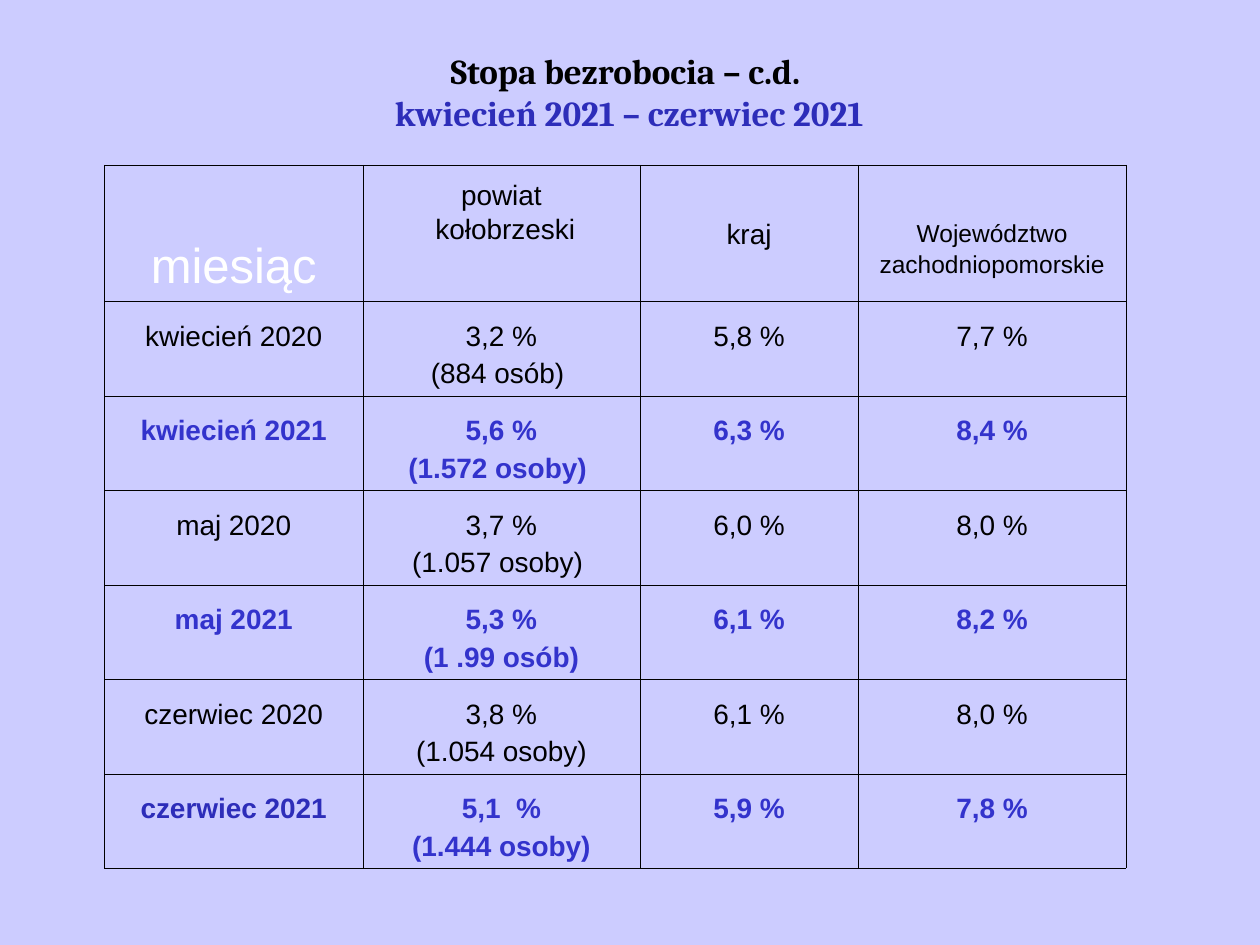
import pptx
import pptx.dml.color
import pptx.enum.text
import pptx.oxml.ns
import pptx.util
from lxml import etree

Inches = pptx.util.Inches
Pt = pptx.util.Pt

COLORS = {
    "background": "CCCCFF",
    "text": "000000",
    "period": "2D2DB9",
    "current": "3333CC",
    "month": "FFFFFF",
    "border": "000000",
}

COLUMN_WIDTHS = [2.05, 2.2, 1.73, 2.13]
HEADER_HEIGHT, ROW_HEIGHT = 1.08, 0.75

# text, size, colour, top margin, line spacing
HEADERS = [
    ("miesiąc", 28, "month", 0.59, 1),
    ("powiat\n kołobrzeski", 16, "text", 0.16, 0.81),
    ("kraj", 16, "text", 0.47, 0.81),
    ("Województwo\nzachodniopomorskie", 14, "text", 0.47, 0.81),
]
RATES = [
    ("kwiecień 2020", "3,2 %\n(884 osób) ", "5,8 %", "7,7 %"),
    ("kwiecień 2021", "5,6 %\n(1.572 osoby) ", "6,3 %", "8,4 %"),
    ("maj 2020", "3,7 %\n(1.057 osoby) ", "6,0 %", "8,0 %"),
    ("maj 2021", "5,3 %\n(1 .99 osób)", "6,1 %", "8,2 %"),
    ("czerwiec 2020", "3,8 %\n(1.054 osoby)", "6,1 %", "8,0 %"),
    ("czerwiec 2021", "5,1  %\n(1.444 osoby)", "5,9 %", "7,8 %"),
]


def rgb(name):
    return pptx.dml.color.RGBColor.from_string(COLORS[name])


class SlideBuilder:
    title_font = "Cambria"
    body_font = "Arial"
    border_width = 0.11

    def __init__(self, prs):
        self.s = prs.slides.add_slide(prs.slide_layouts[5])
        fill = self.s.background.fill
        fill.solid()
        fill.fore_color.rgb = rgb("background")

    def title(self, lines, left, top, width, height):
        sp = self.s.shapes.title
        sp.left, sp.top = Inches(left), Inches(top)
        sp.width, sp.height = Inches(width), Inches(height)
        tf = sp.text_frame
        tf.auto_size = pptx.enum.text.MSO_AUTO_SIZE.NONE
        tf.vertical_anchor = pptx.enum.text.MSO_ANCHOR.MIDDLE
        p = tf.paragraphs[0]
        p.alignment = pptx.enum.text.PP_ALIGN.CENTER
        p.font.name, p.font.size, p.font.bold = self.title_font, Pt(20), True
        for i, (text, color) in enumerate(lines):
            if i:
                p.add_line_break()
            r = p.add_run()
            r.text = text
            r.font.color.rgb = rgb(color)
            r.font.name, r.font.size, r.font.bold = self.title_font, Pt(20), True

    def table(self, left, top, widths, heights):
        frame = self.s.shapes.add_table(
            len(heights), len(widths), Inches(left), Inches(top),
            Inches(sum(widths)), Inches(sum(heights)))
        table = frame.table
        table.first_row = table.horz_banding = False
        for column, width in zip(table.columns, widths):
            column.width = Inches(width)
        for row, height in zip(table.rows, heights):
            row.height = Inches(height)
        return table

    def cell(self, cell, text, size, color, margin_top, line_spacing,
             space_before, bold=False):
        cell.margin_top = Inches(margin_top)
        self.borders(cell)
        cell.fill.background()
        tf = cell.text_frame
        tf.text = text
        for i, p in enumerate(tf.paragraphs):
            p.alignment = pptx.enum.text.PP_ALIGN.CENTER
            p.line_spacing = line_spacing
            if i:
                p.space_before = Pt(space_before)
            p.font.name, p.font.size = self.body_font, Pt(size)
            p.font.bold = bold
            p.font.color.rgb = rgb(color)

    def borders(self, cell):
        qn = pptx.oxml.ns.qn
        props = cell._tc.get_or_add_tcPr()
        for side in ("lnL", "lnR", "lnT", "lnB"):
            line = etree.SubElement(props, qn(f"a:{side}"),
                                    w=str(Pt(self.border_width)))
            fill = etree.SubElement(line, qn("a:solidFill"))
            etree.SubElement(fill, qn("a:srgbClr"), val=COLORS["border"])


def main():
    prs = pptx.Presentation()
    prs.slide_width, prs.slide_height = Inches(10), Inches(7.5)
    slide = SlideBuilder(prs)
    slide.title([("Stopa bezrobocia – c.d. ", "text"),
                 ("kwiecień 2021 – czerwiec 2021", "period")],
                0.5, 0.14, 8.99, 1.17)

    table = slide.table(0.83, 1.31, COLUMN_WIDTHS,
                        [HEADER_HEIGHT] + [ROW_HEIGHT] * len(RATES))
    for col, header in enumerate(HEADERS):
        slide.cell(table.cell(0, col), *header, space_before=5)
    for row, values in enumerate(RATES, start=1):
        current = values[0].endswith("2021")
        for col, text in enumerate(values):
            color = "current" if current else "text"
            if row == len(RATES) and col == 0:
                color = "period"
            slide.cell(table.cell(row, col), text, 16, color, 0.2, 0.81,
                       space_before=7, bold=current)
    prs.save("out.pptx")


if __name__ == "__main__":
    main()
